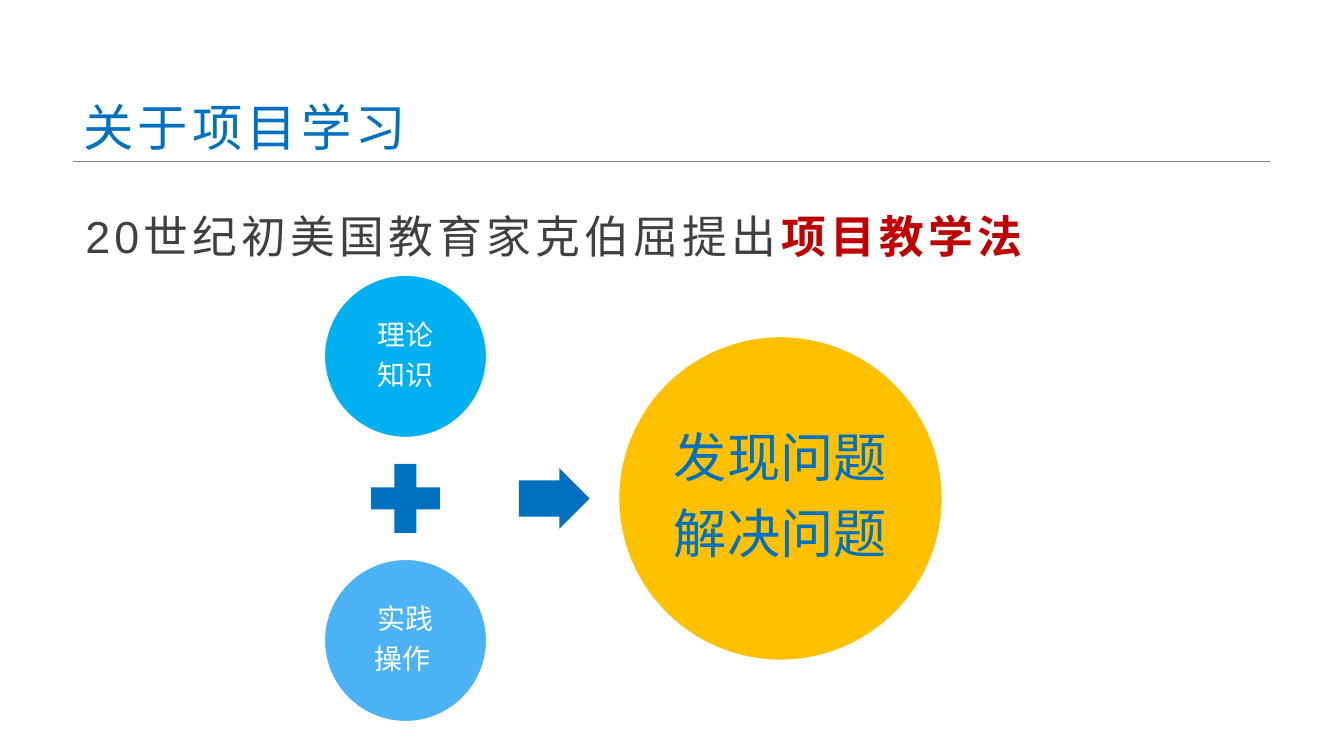
from lxml.etree import SubElement
from pptx import Presentation
from pptx.dml.color import RGBColor
from pptx.enum.shapes import MSO_CONNECTOR, MSO_SHAPE as SHAPE
from pptx.enum.text import MSO_ANCHOR as ANCHOR, PP_ALIGN as ALIGN
from pptx.oxml.ns import qn
from pptx.util import Cm, Pt

BLUE = RGBColor(0x00, 0x70, 0xC0)
CYAN = RGBColor(0x00, 0xB0, 0xF0)
SKY = RGBColor(0x4B, 0xB2, 0xF5)
GOLD = RGBColor(0xFF, 0xC0, 0x00)
RED = RGBColor(0xC0, 0x00, 0x00)
DARK = RGBColor(0x40, 0x40, 0x40)
GRAY = RGBColor(0x80, 0x80, 0x80)
WHITE = RGBColor(0xFF, 0xFF, 0xFF)


class Deck:
    """Draws elements on the current slide in one shared style."""

    font = "Arial"
    spacing = 3

    def __init__(self):
        self.prs = Presentation()
        self.prs.slide_width, self.prs.slide_height = Cm(33.87), Cm(19.05)
        self.s = self.prs.slides.add_slide(self.prs.slide_layouts[6])

    def run(self, p, text, size, color, bold=False, spacing=0):
        r = p.add_run()
        r.text = text
        r.font.name, r.font.size, r.font.bold = self.font, Pt(size), bold
        r.font.color.rgb = color
        if spacing:
            r._r.get_or_add_rPr().set("spc", str(spacing * 100))

    def text(self, x, y, w, h, size, line_spacing, anchor, runs):
        tf = self.s.shapes.add_textbox(Cm(x), Cm(y), Cm(w), Cm(h)).text_frame
        tf.word_wrap, tf.vertical_anchor = True, anchor
        p = tf.paragraphs[0]
        p.line_spacing = line_spacing
        for text, color, bold in runs:
            self.run(p, text, size, color, bold, self.spacing)

    def rule(self, x1, x2, y):
        line = self.s.shapes.add_connector(
            MSO_CONNECTOR.STRAIGHT, Cm(x1), Cm(y), Cm(x2), Cm(y))
        line.line.color.rgb, line.line.width = GRAY, Pt(0.25)
        SubElement(line._element.spPr, qn("a:effectLst"))

    def shape(self, kind, cx, cy, w, h, fill):
        sp = self.s.shapes.add_shape(
            kind, Cm(cx - w / 2), Cm(cy - h / 2), Cm(w), Cm(h))
        sp.shadow.inherit = False
        sp.fill.solid()
        sp.fill.fore_color.rgb = fill
        sp.line.fill.background()
        return sp

    def circle(self, cx, cy, d, fill, lines, size, color, inset):
        sp = self.shape(SHAPE.OVAL, cx, cy, d, d, fill)
        sp.line.color.rgb, sp.line.width = WHITE, Pt(1)
        tf = sp.text_frame
        tf.word_wrap, tf.vertical_anchor = True, ANCHOR.MIDDLE
        tf.margin_left = tf.margin_right = Cm(inset)
        tf.margin_top = tf.margin_bottom = Cm(inset)
        for i, text in enumerate(lines):
            p = tf.add_paragraph() if i else tf.paragraphs[0]
            p.alignment, p.line_spacing = ALIGN.CENTER, 0.9
            p.space_after = Pt(size * 0.35)
            self.run(p, text, size, color)


def main():
    deck = Deck()
    deck.rule(1.85, 32, 4.06)
    deck.text(1.85, 1.24, 16.76, 2.84, 36, 0.9, ANCHOR.BOTTOM,
              [("关于项目学习", BLUE, False)])
    deck.text(1.9, 4.72, 28.35, 2.26, 32, 1.3, ANCHOR.TOP,
              [("20世纪初美国教育家克伯屈提出", DARK, False),
               ("项目教学法", RED, True)])

    input_x, middle_y, offset = 10.22, 12.56, 3.58
    deck.circle(input_x, middle_y - offset, 4.09, CYAN,
                ["理论", "知识"], 20, WHITE, 0.07)
    deck.shape(SHAPE.MATH_PLUS, input_x, middle_y, 2.36, 2.36, BLUE)
    deck.circle(input_x, middle_y + offset, 4.09, SKY,
                ["实践", "操作 "], 20, WHITE, 0.07)
    arrow = deck.shape(SHAPE.RIGHT_ARROW, 13.97, middle_y, 1.78, 1.52, BLUE)
    arrow.adjustments[0] = 0.6
    deck.circle(19.67, middle_y, 8.16, GOLD,
                ["发现问题", "解决问题"], 38, BLUE, 0.12)
    deck.prs.save("out.pptx")


if __name__ == "__main__":
    main()
